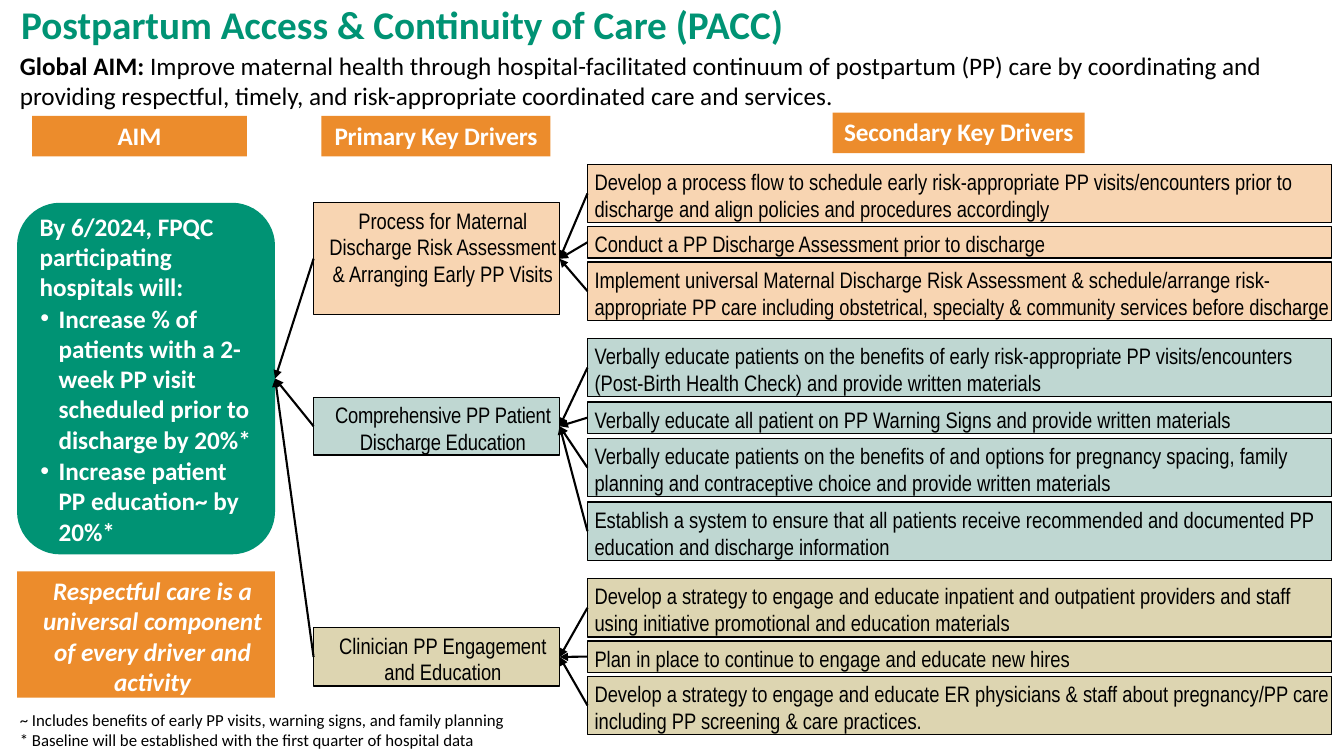
from dataclasses import dataclass

from lxml.etree import SubElement
from pptx import Presentation
from pptx.dml.color import RGBColor
from pptx.enum.shapes import MSO_CONNECTOR, MSO_SHAPE
from pptx.enum.text import MSO_ANCHOR, MSO_AUTO_SIZE, PP_ALIGN
from pptx.oxml.ns import qn
from pptx.shapes.autoshape import Shape
from pptx.slide import Slide
from pptx.util import Cm, Pt

HUES = {
    "ink": "000000",
    "white": "FFFFFF",
    "green": "009374",
    "orange": "EC8C2C",
    "peach": "F8D5B2",
    "mint": "BFD7D2",
    "sand": "DDD5B1",
}
SLIM = "Arial Narrow"
BODY = "Calibri"


@dataclass
class Style:
    font: str
    size: float
    hue: str = "ink"
    bold: bool = False
    slant: bool = False
    track: int = 0
    align: PP_ALIGN = PP_ALIGN.LEFT
    indent: float = 0


@dataclass
class Box:
    left: float
    top: float
    width: float
    height: float
    fill: str
    text: str
    style: Style
    edge: bool = False


@dataclass
class Row:
    text: str
    height: float = 1.47


@dataclass
class Driver:
    text: str
    top: float
    height: float
    fill: str
    start: float
    gap: float
    rows: list[Row]
    track: int = 0


HEAD = Style(BODY, 18, "white", bold=True, track=-10, align=PP_ALIGN.CENTER)
GOAL = Style(BODY, 18, "white", bold=True)
ROW = Style(SLIM, 16, indent=0.18)

HEADS = [
    Box(0.81, 2.92, 5.41, 1.02, "orange", "AIM", HEAD),
    Box(8.1, 2.92, 5.77, 1.02, "orange", "Primary Key Drivers", HEAD),
    Box(20.98, 2.84, 6.35, 1.02, "orange", "Secondary Key Drivers", HEAD),
    Box(0.43, 14.4, 6.5, 3.18, "orange",
        "Respectful care is a universal component of every driver and activity",
        Style(BODY, 18, "white", bold=True, slant=True, align=PP_ALIGN.CENTER, indent=0.33)),
]

DRIVERS = [
    Driver("Process for Maternal Discharge Risk Assessment & Arranging Early PP Visits",
           5.11, 2.82, "peach", 4.14, 0.1, [
               Row("Develop a process flow to schedule early risk-appropriate PP visits/encounters "
                   "prior to discharge and align policies and procedures accordingly"),
               Row("Conduct a PP Discharge Assessment prior to discharge", 0.79),
               Row("Implement universal Maternal Discharge Risk Assessment & schedule/arrange "
                   "risk-appropriate PP care including obstetrical, specialty & community "
                   "services before discharge"),
           ]),
    Driver("Comprehensive PP Patient Discharge Education",
           10.01, 1.46, "mint", 8.53, 0.13, [
               Row("Verbally educate patients on the benefits of early risk-appropriate PP "
                   "visits/encounters (Post-Birth Health Check) and provide written materials"),
               Row("Verbally educate all patient on PP Warning Signs and provide written "
                   "materials", 0.79),
               Row("Verbally educate patients on the benefits of and options for pregnancy "
                   "spacing, family planning and contraceptive choice and provide written "
                   "materials"),
               Row("Establish a system to ensure that all patients receive recommended and "
                   "documented PP education and discharge information"),
           ], track=-10),
    Driver("Clinician PP Engagement and Education",
           15.82, 1.47, "sand", 14.58, 0.1, [
               Row("Develop a strategy to engage and educate inpatient and outpatient providers "
                   "and staff using initiative promotional and education materials"),
               Row("Plan in place to continue to engage and educate new hires", 0.79),
               Row("Develop a strategy to engage and educate ER physicians & staff about "
                   "pregnancy/PP care including PP screening & care practices."),
           ]),
]


def tint(hue: str) -> RGBColor:
    return RGBColor.from_string(HUES[hue])


def write(shape: Shape, text: str, style: Style) -> None:
    frame = shape.text_frame
    frame.word_wrap = True
    frame.auto_size = MSO_AUTO_SIZE.NONE
    frame.text = text
    for para in frame.paragraphs:
        para.alignment = style.align
        if style.indent:
            para._p.get_or_add_pPr().set("marL", str(Cm(style.indent)))
        for run in para.runs:
            font = run.font
            font.name, font.size = style.font, Pt(style.size)
            font.bold, font.italic = style.bold, style.slant
            font.color.rgb = tint(style.hue)
            if style.track:
                run._r.get_or_add_rPr().set("spc", str(style.track))


def draw(slide: Slide, box: Box, kind: MSO_SHAPE = MSO_SHAPE.RECTANGLE) -> Shape:
    shape = slide.shapes.add_shape(
        kind, Cm(box.left), Cm(box.top), Cm(box.width), Cm(box.height))
    shape.shadow.inherit = False
    shape.fill.solid()
    shape.fill.fore_color.rgb = tint(box.fill)
    if box.edge:
        shape.line.color.rgb = tint("ink")
        shape.line.width = Pt(0.96)
    else:
        shape.line.fill.background()
    write(shape, box.text, box.style)
    if kind == MSO_SHAPE.RECTANGLE:
        frame = shape.text_frame
        frame.vertical_anchor = MSO_ANCHOR.TOP
        frame.margin_left = frame.margin_right = frame.margin_bottom = 0
        frame.margin_top = Cm(0.1)
    return shape


def link(slide: Slide, tail: Shape, tip: Shape) -> None:
    arrow = slide.shapes.add_connector(MSO_CONNECTOR.STRAIGHT, 0, 0, 0, 0)
    arrow.begin_connect(tail, 1)
    arrow.end_connect(tip, 3)
    arrow.line.color.rgb = tint("ink")
    arrow.line.width = Pt(1.5)
    SubElement(arrow.line._get_or_add_ln(), qn("a:tailEnd"), type="triangle")
    SubElement(arrow._element.spPr, qn("a:effectLst"))


def note(slide: Slide, left: float, top: float, width: float, height: float,
         text: str, style: Style) -> Shape:
    shape = slide.shapes.add_textbox(Cm(left), Cm(top), Cm(width), Cm(height))
    write(shape, text, style)
    return shape


def goal(slide: Slide) -> Shape:
    text = ("By 6/2024, FPQC participating hospitals will:\n"
            "Increase % of patients with a 2-week PP visit scheduled prior to discharge by 20%*\n"
            "Increase patient PP education~ by 20%*")
    shape = draw(slide, Box(0.43, 5.11, 6.5, 8.86, "green", text, GOAL),
                 MSO_SHAPE.ROUNDED_RECTANGLE)
    shape.text_frame.vertical_anchor = MSO_ANCHOR.MIDDLE
    for para in shape.text_frame.paragraphs[1:]:
        props = para._p.get_or_add_pPr()
        props.set("marL", str(Cm(0.48)))
        props.set("indent", str(Cm(-0.46)))
        SubElement(props, qn("a:buFont"), typeface="Arial")
        SubElement(props, qn("a:buChar"), char="•")
        para.space_before = Pt(1)
    return shape


def main() -> None:
    deck = Presentation()
    deck.slide_width, deck.slide_height = Cm(33.86), Cm(19.05)
    slide = deck.slides.add_slide(deck.slide_layouts[5])

    title = slide.shapes.title
    title.left, title.top, title.width, title.height = Cm(0.28), Cm(0.23), Cm(23.22), Cm(0.89)
    write(title, "Postpartum Access & Continuity of Care (PACC)",
          Style(BODY, 28, "green", bold=True))
    title.text_frame.vertical_anchor = MSO_ANCHOR.MIDDLE
    title.text_frame.paragraphs[0].line_spacing = 0.9

    lead = note(slide, 0.25, 1.14, 33.45, 1.8, "Global AIM: ", Style(BODY, 18, bold=True))
    rest = lead.text_frame.paragraphs[0].add_run()
    rest.text = ("Improve maternal health through hospital-facilitated continuum of postpartum "
                 "(PP) care by coordinating and providing respectful, timely, and "
                 "risk-appropriate coordinated care and services.")
    rest.font.name, rest.font.size = BODY, Pt(18)
    rest.font.color.rgb = tint("ink")

    for box in HEADS:
        draw(slide, box)
    aim = goal(slide)
    for item in DRIVERS:
        style = Style(SLIM, 16, track=item.track, align=PP_ALIGN.CENTER, indent=0.32)
        hub = draw(slide, Box(7.9, item.top, 6.2, item.height, item.fill,
                              item.text, style, True))
        link(slide, hub, aim)
        top = item.start
        for row in item.rows:
            leaf = draw(slide, Box(14.8, top, 18.75, row.height, item.fill,
                                   row.text, ROW, True))
            link(slide, leaf, hub)
            top += row.height + item.gap

    note(slide, 0.25, 17.75, 12.88, 1.27,
         "~ Includes benefits of early PP visits, warning signs, and family planning\n"
         "* Baseline will be established with the first quarter of hospital data",
         Style(BODY, 12))
    deck.save("out.pptx")


if __name__ == "__main__":
    main()
